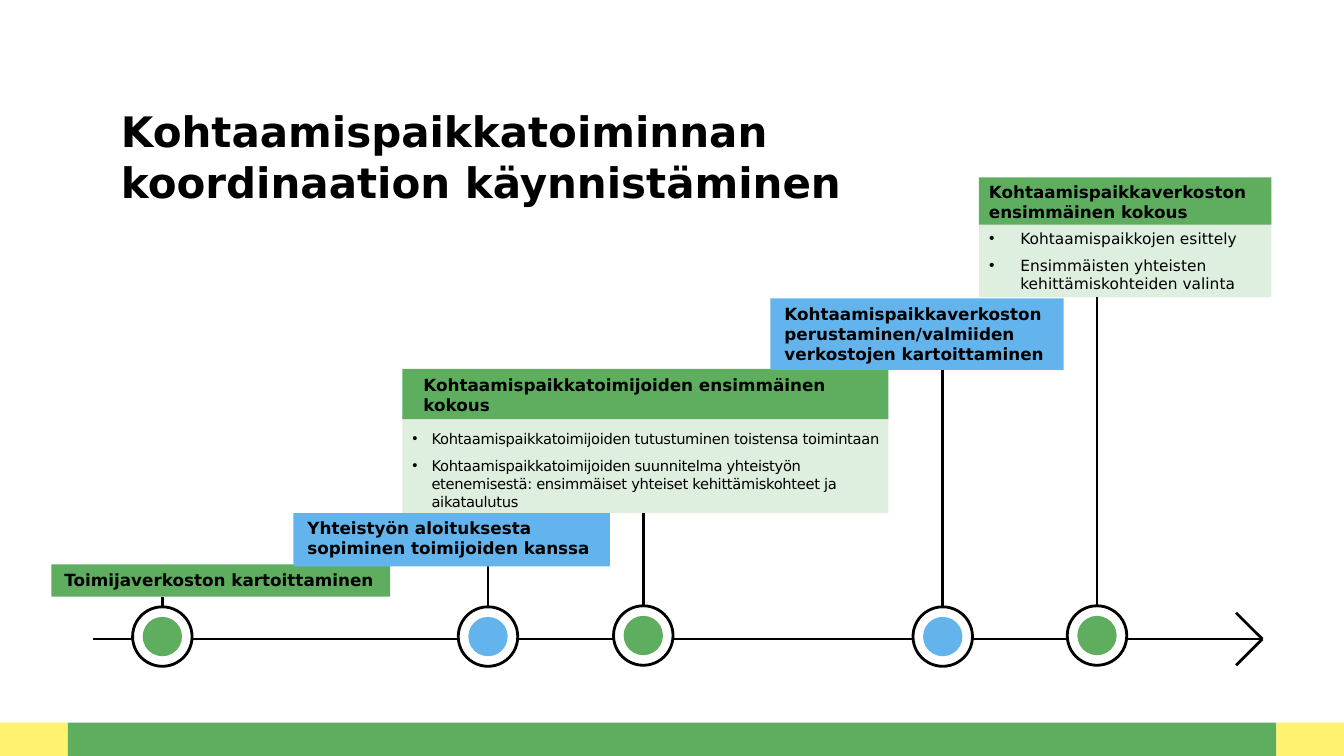
"""Build a timeline slide on starting the coordination of meeting places."""
from dataclasses import dataclass

from lxml import etree
from pptx import Presentation
from pptx.dml.color import RGBColor
from pptx.enum.shapes import MSO_CONNECTOR, MSO_SHAPE
from pptx.enum.text import MSO_ANCHOR, MSO_AUTO_SIZE, PP_ALIGN
from pptx.oxml.ns import qn
from pptx.util import Inches, Pt

RECT = MSO_SHAPE.RECTANGLE
OVAL = MSO_SHAPE.OVAL
LINE = MSO_CONNECTOR.STRAIGHT
TOP = MSO_ANCHOR.TOP
LEFT = PP_ALIGN.LEFT
FIXED = MSO_AUTO_SIZE.NONE


@dataclass(frozen=True)
class Theme:
    """Colours, font and type sizes of the slide."""
    green: str = "5FAE60"
    blue: str = "63B4EC"
    pale: str = "DFEFDF"
    yellow: str = "FFF26E"
    white: str = "FFFFFF"
    ink: str = "000000"
    font: str = "DejaVu Sans"
    title: float = 30
    head: float = 12
    rule: float = 2


@dataclass(frozen=True)
class Box:
    """A place on the slide in inches."""
    x: float
    y: float
    w: float
    h: float

    @property
    def base(self) -> float:
        """Return the lower edge."""
        return self.y + self.h


@dataclass(frozen=True)
class Panel:
    """A bullet list below a heading."""
    box: Box
    items: tuple[str, ...]
    pad: tuple[float, float, float, float]
    size: float
    indent: float
    pitch: float = 1.0
    track: int = 0


@dataclass(frozen=True)
class Stage:
    """One step of the timeline."""
    text: str
    box: Box
    pad: tuple[float, float]
    fill: str
    dot: float
    top: float = 6.02
    panel: Panel | None = None


THEME = Theme()
RING, CORE = 0.59, 0.39
AXIS, TIP, BARB = 6.34, 12.52, 0.26
EDGE, FOOT, WIDE, HIGH = 0.67, 7.17, 13.33, 7.5

STAGES = (
    Stage("Toimijaverkoston kartoittaminen",
          Box(0.51, 5.6, 3.36, 0.32), (0.13, 0.05), THEME.green, 1.61),
    Stage("Yhteistyön aloituksesta sopiminen toimijoiden kanssa",
          Box(2.91, 5.09, 3.14, 0.53), (0.14, 0.05), THEME.blue, 4.84),
    Stage("Kohtaamispaikkatoimijoiden ensimmäinen kokous",
          Box(3.99, 3.66, 4.82, 0.5), (0.21, 0.06), THEME.green, 6.38, 6.01,
          Panel(Box(3.99, 4.08, 4.82, 1.01),
                ("Kohtaamispaikkatoimijoiden tutustuminen toistensa toimintaan",
                 "Kohtaamispaikkatoimijoiden suunnitelma yhteistyön etenemisestä: "
                 "ensimmäiset yhteiset kehittämiskohteet ja aikataulutus"),
                (0.1, 0.18, 0, 0), 10.5, 0.19, 1.03, -20)),
    Stage("Kohtaamispaikkaverkoston perustaminen/valmiiden verkostojen kartoittaminen",
          Box(7.64, 2.96, 2.91, 0.71), (0.14, 0.05), THEME.blue, 9.35),
    Stage("Kohtaamispaikkaverkoston ensimmäinen kokous",
          Box(9.71, 1.76, 2.9, 0.47), (0.1, 0.04), THEME.green, 10.88, 6.01,
          Panel(Box(9.71, 2.13, 2.9, 0.82),
                ("Kohtaamispaikkojen esittely",
                 "Ensimmäisten yhteisten kehittämiskohteiden valinta"),
                (0.1, 0.14, 0.1, 0), 11, 0.31)),
)


def paint(shape, color: str) -> None:
    """Fill a shape with one colour."""
    shape.fill.solid()
    shape.fill.fore_color.rgb = RGBColor.from_string(color)


def place(shape, box: Box) -> None:
    """Move a placeholder to a box."""
    shape.left, shape.top = Inches(box.x), Inches(box.y)
    shape.width, shape.height = Inches(box.w), Inches(box.h)


def write(shape, *lines: str, size: float, bold: bool = False,
          pad: tuple[float, float, float, float] = (0, 0, 0, 0),
          indent: float = 0, pitch: float = 1.0, track: int = 0) -> None:
    """Write paragraphs, with bullets where an indent is given."""
    frame = shape.text_frame
    frame.word_wrap, frame.auto_size, frame.vertical_anchor = True, FIXED, TOP
    (frame.margin_left, frame.margin_top,
     frame.margin_right, frame.margin_bottom) = map(Inches, pad)
    for i, line in enumerate(lines):
        para = frame.add_paragraph() if i else frame.paragraphs[0]
        para.alignment, para.line_spacing = LEFT, pitch
        para.space_before = Pt(6 if i else 0)
        if indent:
            props = para._p.get_or_add_pPr()
            props.set("marL", str(Inches(indent)))
            props.set("indent", str(-Inches(indent)))
            etree.SubElement(props, qn("a:buChar")).set("char", "•")
        run = para.add_run()
        run.text = line
        run.font.name, run.font.size, run.font.bold = THEME.font, Pt(size), bold
        run.font.color.rgb = RGBColor.from_string(THEME.ink)
        if track:
            run._r.get_or_add_rPr().set("spc", str(track))


def block(slide, kind, box: Box, fill: str, edge: bool = False):
    """Add a filled shape, outlined if asked."""
    shape = slide.shapes.add_shape(
        kind, *map(Inches, (box.x, box.y, box.w, box.h)))
    shape.shadow.inherit = False
    paint(shape, fill)
    if edge:
        shape.line.color.rgb = RGBColor.from_string(THEME.ink)
        shape.line.width = Pt(THEME.rule)
    else:
        shape.line.fill.background()
    return shape


def rule(slide, x: float, y: float, to_x: float, to_y: float) -> None:
    """Add a straight black line."""
    line = slide.shapes.add_connector(LINE, *map(Inches, (x, y, to_x, to_y)))
    line.line.color.rgb = RGBColor.from_string(THEME.ink)
    line.line.width = Pt(THEME.rule)
    etree.SubElement(line._element.spPr, qn("a:effectLst"))


def main() -> None:
    """Draw the slide and save it."""
    deck = Presentation()
    deck.slide_width, deck.slide_height = Inches(WIDE), Inches(HIGH)
    slide = deck.slides.add_slide(deck.slide_layouts[3])
    title, *bodies = slide.placeholders
    place(title, Box(1.2, 1.05, 7.4, 1.13))
    write(title, "Kohtaamispaikkatoiminnan koordinaation käynnistäminen",
          size=THEME.title, bold=True)

    depth = HIGH - FOOT
    block(slide, RECT, Box(EDGE, FOOT, WIDE - 2 * EDGE, depth), THEME.green)
    for x in (0, WIDE - EDGE):
        block(slide, RECT, Box(x, FOOT, EDGE, depth), THEME.yellow)

    panels = [stage.panel for stage in STAGES if stage.panel]
    for body, panel in zip(bodies, panels):
        place(body, panel.box)
        paint(body, panel.box and THEME.pale)
        write(body, *panel.items, size=panel.size, pad=panel.pad,
              indent=panel.indent, pitch=panel.pitch, track=panel.track)

    for stage in STAGES:
        base = (stage.panel or stage).box.base
        rule(slide, stage.dot, base, stage.dot, stage.top)
    for stage in STAGES:
        head = block(slide, RECT, stage.box, stage.fill)
        write(head, stage.text, size=THEME.head, bold=True, pad=(*stage.pad, 0, 0))

    rule(slide, 0.92, AXIS, TIP, AXIS)
    for side in (-BARB, BARB):
        rule(slide, TIP - BARB, AXIS + side, TIP, AXIS)
    for stage in STAGES:
        mid = stage.top + RING / 2
        for size, fill, edge in ((RING, THEME.white, True), (CORE, stage.fill, False)):
            box = Box(stage.dot - size / 2, mid - size / 2, size, size)
            block(slide, OVAL, box, fill, edge)

    deck.save("out.pptx")


if __name__ == "__main__":
    main()
